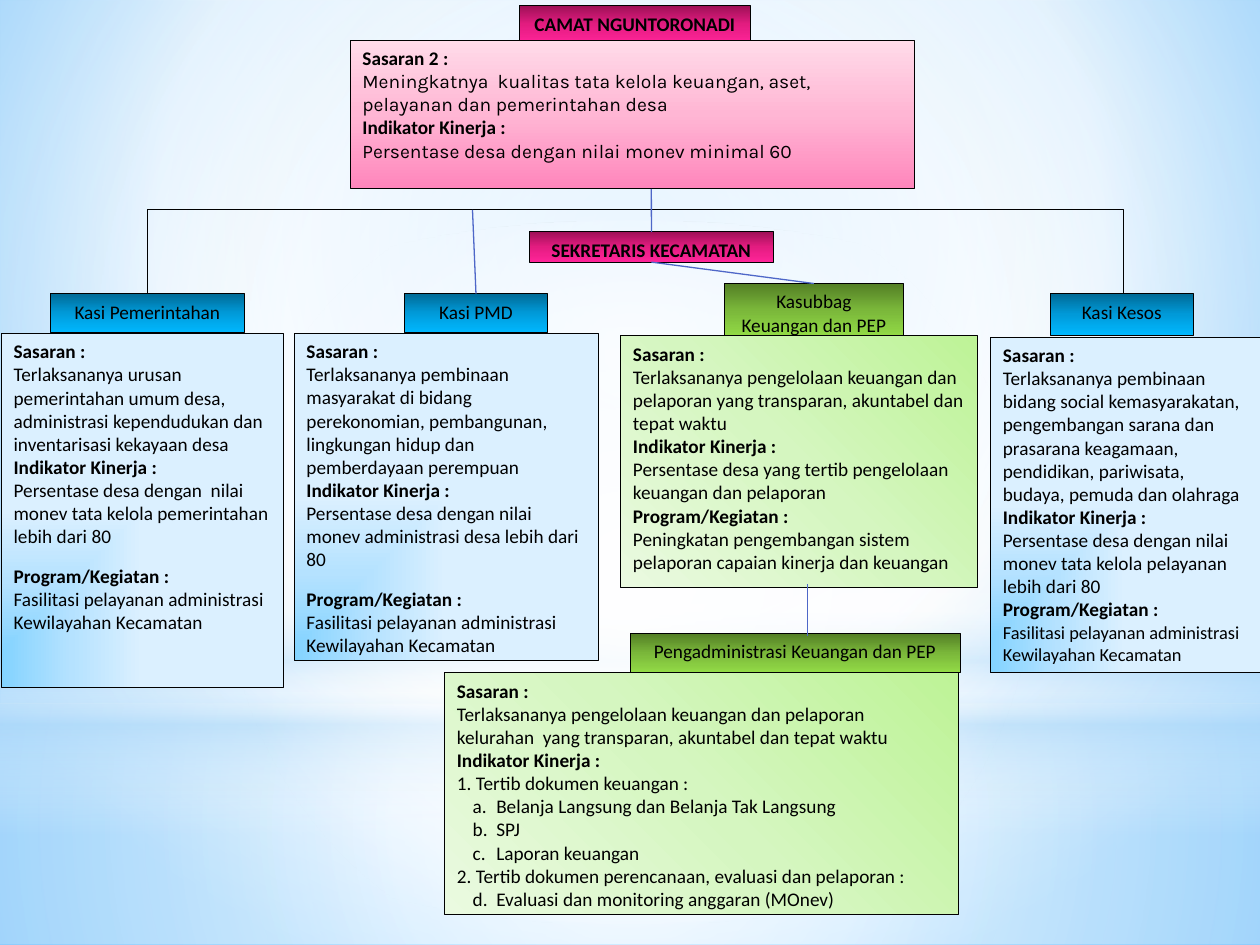
from lxml.etree import SubElement
from pptx import Presentation
from pptx.dml.color import RGBColor
from pptx.enum.shapes import MSO_CONNECTOR as Connector, MSO_SHAPE as Shape
from pptx.enum.text import MSO_ANCHOR as Anchor, PP_ALIGN as Align
from pptx.oxml.ns import qn
from pptx.util import Pt

# Theme: gradients are (stops, geometry); a stop is (position, colour, opacity)
THEME = {
    "black": "000000", "connector": "4E67C8",
    "outline": 0.5, "link": 0.75, "program gap": 9.5,
    "backdrop": ([(0, "9ED5FF"), (60, "FFFFFF"), (100, "5BB9FF")], (20, 10, 20, 60)),
    "floor": ([(0, "FFFFFF", 91), (37, "FFFFFF", 76), (100, "B4DCFA", 79)], (50, 50, 50, 50)),
    "sky": ([(0, "FFFFFF", 89), (48, "FFFFFF", 62), (100, "B4DCFA", 79)], (50, 50, 50, 50)),
    "horizon": ([(0, "FFFFFF", 0), (29, "FFFFFF", 30), (45, "B4DCFA", 40),
                 (55, "FFFFFF", 26), (65, "B4DCFA", 60), (100, "FFFFFF", 0)], 90),
    "glow": ([(0, "FFFFFF"), (56, "FFFFFF", 0)], (50, 50, 50, 50)),
    "magenta": ([(0, "9E1057"), (50, "E31C80"), (100, "FF2499")], 90),
    "pink": ([(0, "FF86BC"), (50, "FFB6D4"), (100, "FFDBE9")], 270),
    "blue": ([(0, "006A96"), (50, "009AD9"), (100, "00B8FF")], 90),
    "pale blue": ([(0, "83D3FF"), (50, "B5E2FF"), (100, "DBF0FF")], (0, 100, 100, 0)),
    "green": ([(0, "537E25"), (50, "7AB73A"), (100, "92DA46")], 90),
    "pale green": ([(0, "BEF397"), (50, "D5F6C0"), (100, "EAFAE0")], 135),
    "heading": {"name": "Calibri", "size": Pt(11), "bold": True},
    "text": {"name": "Calibri", "size": Pt(11), "bold": False},
    "small": {"name": "Calibri", "size": Pt(10.5), "bold": False},
    "goal": {"name": "Karla", "size": Pt(11), "bold": False},
}

# Background layers: preset, (left, top, width, height), gradient
LAYERS = [
    (Shape.RECTANGLE, (0, 402, 720, 138), "floor"),
    (Shape.RECTANGLE, (0, 0, 720, 402), "sky"),
    (Shape.RECTANGLE, (0, 296.6, 720, 180), "horizon"),
    (Shape.OVAL, (0, 126, 720, 402), "glow"),
]

# Title boxes: name -> text, place, gradient, text style
TITLES = {
    "camat": ("CAMAT NGUNTORONADI", (296.6, 3.2, 132.5, 21.6), "magenta", "heading"),
    "pemerintahan": ("Kasi Pemerintahan", (28.8, 167.8, 110.9, 22.3), "blue", "text"),
    "pmd": ("Kasi PMD", (231, 167.8, 82, 22.3), "blue", "text"),
    "kesos": ("Kasi Kesos", (600, 167.8, 82, 23.8), "blue", "text"),
    "sekretaris": ("SEKRETARIS KECAMATAN", (302.4, 132.5, 139.7, 17.3), "magenta", "heading"),
    "kasubbag": ("Kasubbag Keuangan dan PEP", (414, 162, 102.2, 30.2), "green", "text"),
    "pengadministrasi": ("Pengadministrasi Keuangan dan PEP", (360, 362, 188.6, 22.3),
                         "green", "text"),
}

SASARAN, INDIKATOR, PROGRAM = "Sasaran :", "Indikator Kinerja :", "Program/Kegiatan :"
SERVICE = "Fasilitasi pelayanan administrasi Kewilayahan Kecamatan"

# Detail boxes: place, gradient, paragraphs as (style, text)
DETAILS = [
    ((200, 23, 322.6, 84.7), "pink", [
        ("heading", "Sasaran 2 :"),
        ("goal", "Meningkatnya  kualitas tata kelola keuangan, aset, pelayanan dan pemerintahan desa"),
        ("heading", INDIKATOR),
        ("goal", "Persentase desa dengan nilai monev minimal 60")]),
    ((0.7, 190.5, 161.3, 202.3), "pale blue", [
        ("heading", SASARAN),
        ("text", "Terlaksananya urusan pemerintahan umum desa, administrasi kependudukan "
                 "dan inventarisasi kekayaan desa"),
        ("heading", INDIKATOR),
        ("text", "Persentase desa dengan  nilai monev tata kelola pemerintahan lebih dari 80"),
        ("spaced", PROGRAM), ("text", SERVICE)]),
    ((168, 190.5, 174.2, 187.2), "pale blue", [
        ("heading", SASARAN),
        ("text", "Terlaksananya pembinaan masyarakat di bidang perekonomian, pembangunan, "
                 "lingkungan hidup dan pemberdayaan perempuan"),
        ("heading", INDIKATOR),
        ("text", "Persentase desa dengan nilai monev administrasi desa lebih dari 80"),
        ("spaced", PROGRAM), ("text", SERVICE)]),
    ((566, 192.7, 154, 191.5), "pale blue", [
        ("heading", SASARAN),
        ("text", "Terlaksananya pembinaan bidang social kemasyarakatan, pengembangan sarana dan "
                 "prasarana keagamaan, pendidikan, pariwisata, budaya, pemuda dan olahraga"),
        ("heading", INDIKATOR),
        ("text", "Persentase desa dengan nilai monev tata kelola pelayanan lebih dari 80"),
        ("heading", PROGRAM), ("small", SERVICE)]),
    ((354.6, 191.9, 204, 143.8), "pale green", [
        ("heading", SASARAN),
        ("text", "Terlaksananya pengelolaan keuangan dan pelaporan yang transparan, "
                 "akuntabel dan tepat waktu"),
        ("heading", INDIKATOR),
        ("text", "Persentase desa yang tertib pengelolaan keuangan dan pelaporan"),
        ("heading", PROGRAM),
        ("text", "Peningkatan pengembangan sistem pelaporan capaian kinerja dan keuangan")]),
    ((254, 384.5, 294, 138), "pale green", [
        ("heading", SASARAN),
        ("text", "Terlaksananya pengelolaan keuangan dan pelaporan kelurahan  yang transparan, "
                 "akuntabel dan tepat waktu"),
        ("heading", INDIKATOR),
        ("text", "1. Tertib dokumen keuangan :"),
        ("item", "Belanja Langsung dan Belanja Tak Langsung"),
        ("item", "SPJ"),
        ("item", "Laporan keuangan"),
        ("text", "2. Tertib dokumen perencanaan, evaluasi dan pelaporan :"),
        ("last item", "Evaluasi dan monitoring anggaran (MOnev)")]),
]
ITEM_START = {"item": 1, "last item": 4}
STYLE_OF = {"spaced": "heading", "item": "text", "last item": "text"}

# Bracket bounds (left, top, right, bottom); links as start, end, begin box, end box
BRACKET = (84.1, 119.8, 642.1, 168)
LINKS = [
    ((372.2, 108), (372.2, 132.5), None, "sekretaris"),
    ((270, 120), (272, 167.8), None, "pmd"),
    ((461.5, 334), (461.5, 363.6), None, None),
    ((372.2, 149.8), (465.1, 162), "sekretaris", "kasubbag"),
]


def colour(name):
    return RGBColor.from_string(THEME[name])


def points(values):
    return [Pt(value) for value in values]


def apply_gradient(fill, parent, name):
    """Swap a solid fill for a linear (angle) or centred (rectangle) gradient."""
    stops, geometry = THEME[name]
    fill.solid()
    fill.fore_color.rgb = RGBColor(255, 255, 255)
    solid = parent.find(qn("a:solidFill"))
    gradient = parent.makeelement(qn("a:gradFill"), {"rotWithShape": "1"})
    stop_list = SubElement(gradient, qn("a:gsLst"))
    for position, rgb, *opacity in stops:
        stop = SubElement(stop_list, qn("a:gs"), pos=str(position * 1000))
        tint = SubElement(stop, qn("a:srgbClr"), val=rgb)
        if opacity:
            SubElement(tint, qn("a:alpha"), val=str(opacity[0] * 1000))
    if isinstance(geometry, tuple):
        kind = "rect" if name == "pale blue" else "circle"
        centre = SubElement(gradient, qn("a:path"), {"path": kind})
        SubElement(centre, qn("a:fillToRect"),
                   {side: str(part * 1000) for side, part in zip("ltrb", geometry)})
    else:
        SubElement(gradient, qn("a:lin"), ang=str(geometry * 60000), scaled="0")
    parent.replace(solid, gradient)


def add_layer(slide, preset, place, gradient):
    shape = slide.shapes.add_shape(preset, *points(place))
    shape.shadow.inherit = False
    apply_gradient(shape.fill, shape._element.spPr, gradient)
    shape.line.fill.background()
    return shape


def add_box(slide, place, gradient, paragraphs, align):
    shape = add_layer(slide, Shape.RECTANGLE, place, gradient)
    shape.line.color.rgb = colour("black")
    shape.line.width = Pt(THEME["outline"])
    frame = shape.text_frame
    frame.word_wrap, frame.vertical_anchor = True, Anchor.TOP
    for index, (style, text) in enumerate(paragraphs):
        paragraph = frame.add_paragraph() if index else frame.paragraphs[0]
        paragraph.alignment = align
        if style == "spaced":
            paragraph.space_before = Pt(THEME["program gap"])
        if style in ITEM_START:
            properties = paragraph._p.get_or_add_pPr()
            properties.set("marL", str(Pt(22.5)))
            properties.set("indent", str(Pt(-13.5)))
            SubElement(properties, qn("a:buAutoNum"), type="alphaLcPeriod",
                       startAt=str(ITEM_START[style]))
        run = paragraph.add_run()
        run.text = text
        run.font.color.rgb = colour("black")
        for attribute, value in THEME[STYLE_OF.get(style, style)].items():
            setattr(run.font, attribute, value)
    return shape


def add_bracket(slide):
    """A square right bracket turned a quarter to the left, so it opens downwards."""
    left, top, right, bottom = BRACKET
    depth, span = bottom - top, right - left
    place = ((left + right - depth) / 2, (top + bottom - span) / 2, depth, span)
    shape = slide.shapes.add_shape(Shape.RIGHT_BRACKET, *points(place))
    shape.rotation, shape.adjustments[0] = 270, 0
    shape.shadow.inherit = False
    shape.fill.background()
    shape.line.color.rgb = colour("black")
    shape.line.width = Pt(THEME["link"])


def add_link(slide, start, end, begin_box, end_box):
    link = slide.shapes.add_connector(Connector.STRAIGHT, *points(start + end))
    if begin_box:
        link.begin_connect(begin_box, 2)
    if end_box:
        link.end_connect(end_box, 0)
    link.line.color.rgb = colour("connector")
    link.line.width = Pt(THEME["link"])
    SubElement(link._element.spPr, qn("a:effectLst"))


def main():
    presentation = Presentation()
    presentation.slide_width, presentation.slide_height = Pt(720), Pt(540)
    slide = presentation.slides.add_slide(presentation.slide_layouts[6])
    # Background
    fill = slide.background.fill
    fill.solid()
    apply_gradient(fill, slide._element.xpath(".//p:bgPr")[0], "backdrop")
    for layer in LAYERS:
        add_layer(slide, *layer)
    # Boxes
    boxes = {name: add_box(slide, place, gradient, [(style, text)], Align.CENTER)
             for name, (text, place, gradient, style) in TITLES.items()}
    for place, gradient, paragraphs in DETAILS:
        add_box(slide, place, gradient, paragraphs, Align.LEFT)
    # Lines of command
    add_bracket(slide)
    for start, end, begin, finish in LINKS:
        add_link(slide, start, end, boxes.get(begin), boxes.get(finish))
    presentation.save("out.pptx")


if __name__ == "__main__":
    main()
